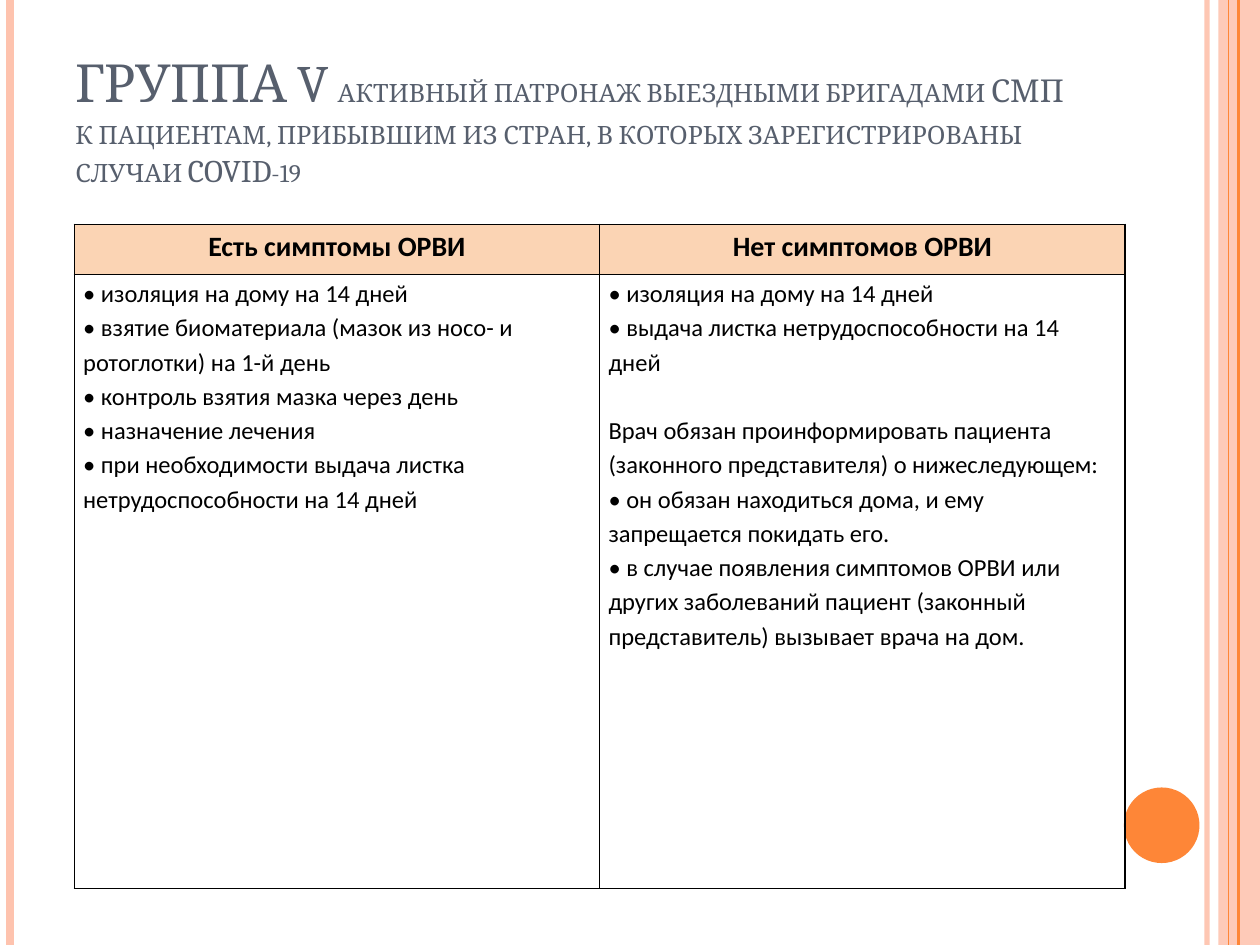
from pptx import Presentation
from pptx.dml.color import RGBColor as RGB
from pptx.enum.shapes import MSO_CONNECTOR as LINE, MSO_SHAPE as SHAPE
from pptx.enum.text import MSO_ANCHOR as ANCHOR, PP_ALIGN as ALIGN
from pptx.oxml.ns import qn
from pptx.util import Inches, Pt
from lxml.etree import SubElement as Sub


def paint(fill, tint, alpha=100):
    fill.solid()
    fill.fore_color.rgb = RGB.from_string(tint)
    if alpha < 100:
        node = fill._xPr.find(qn("a:solidFill"))[0]
        Sub(node, qn("a:alpha")).set("val", str(alpha * 1000))


def write(par, text, face, size, tint, bold=False):
    run = par.add_run()
    run.text = text
    run.font.name = face
    run.font.size = Pt(size)
    run.font.bold = bold
    run.font.color.rgb = RGB.from_string(tint)
    return run


deck = Presentation()
deck.slide_width, deck.slide_height = Inches(10), Inches(7.5)
slide = deck.slides.add_slide(deck.slide_layouts[6])
shapes = slide.shapes
paint(slide.background.fill, "FFFFFF")

stripes = [
    (9.58, "FEC3AE", 3, 93),
    (0.08, "FEC3AE", 4.5, 100),
    (9.83, "FE8637", 1.5, 100),
    (9.75, "FE8637", 0.75, 100),
]
blocks = [
    (SHAPE.RECTANGLE, 9.67, 0, 0.33, 7.5, "FEC3AE", 87),
    (SHAPE.OVAL, 8.92, 6.25, 0.6, 0.6, "FE8637", 100),
]
for kind, left, top, wide, high, tint, alpha in blocks:
    block = shapes.add_shape(kind, Inches(left), Inches(top), Inches(wide), Inches(high))
    block.shadow.inherit = False
    block.line.fill.background()
    paint(block.fill, tint, alpha)
for left, tint, width, alpha in stripes:
    stripe = shapes.add_connector(LINE.STRAIGHT, Inches(left), 0, Inches(left), Inches(7.5))
    stripe.line.width = Pt(width)
    paint(stripe.line.fill, tint, alpha)
    Sub(stripe._element.spPr, qn("a:effectLst"))

title = shapes.add_textbox(Inches(0.5), Inches(0.3), Inches(8.17), Inches(1.25)).text_frame
title.word_wrap = True
title.vertical_anchor = ANCHOR.BOTTOM
heads = [
    ("ГРУППА V ", 30),
    ("активный патронаж выездными бригадами СМП к пациентам, прибывшим из стран, "
     "в которых зарегистрированы случаи COVID-19", 18),
]
for text, size in heads:
    run = write(title.paragraphs[0], text, "Cambria", size, "575F6D")
    run.font._element.set("cap", "small")

rows = [
    [["Есть симптомы ОРВИ"], ["Нет симптомов ОРВИ"]],
    [
        [
            "• изоляция на дому на 14 дней",
            "• взятие биоматериала (мазок из носо- и ротоглотки) на 1-й день",
            "• контроль взятия мазка через день",
            "• назначение лечения",
            "• при необходимости выдача листка нетрудоспособности на 14 дней",
        ],
        [
            "• изоляция на дому на 14 дней",
            "• выдача листка нетрудоспособности на 14 дней",
            "Врач обязан проинформировать пациента (законного представителя) о нижеследующем:\n"
            "• он обязан находиться дома, и ему запрещается покидать его.",
            "• в случае появления симптомов ОРВИ или других заболеваний пациент "
            "(законный представитель) вызывает врача на дом.",
        ],
    ],
]
table = shapes.add_table(2, 2, Inches(0.59), Inches(1.78), Inches(8.34), Inches(5.27)).table
for col in table.columns:
    col.width = Inches(4.17)
for row, high in zip(table.rows, (0.4, 4.87)):
    row.height = Inches(high)

for r, row in enumerate(rows):
    for c, lines in enumerate(row):
        cell = table.cell(r, c)
        cell.margin_left = cell.margin_right = Inches(0.07)
        cell.margin_top = cell.margin_bottom = 0
        props = cell._tc.get_or_add_tcPr()
        for side in ("lnL", "lnR", "lnT", "lnB"):
            edge = Sub(props, qn("a:" + side), w=str(Pt(1)))
            Sub(Sub(edge, qn("a:solidFill")), qn("a:srgbClr"), val="000000")
        if r == 0:
            paint(cell.fill, "FBD4B4")
        else:
            cell.fill.background()
        frame = cell.text_frame
        for i, line in enumerate(lines):
            par = frame.add_paragraph() if i else frame.paragraphs[0]
            par.line_spacing = 1.15
            par.alignment = ALIGN.LEFT if r else ALIGN.CENTER
            if line.startswith("Врач"):
                par.space_before = Pt(19.6)
            for j, part in enumerate(line.split("\n")):
                if j:
                    par.add_line_break()
                write(par, part, "Calibri", 14 if r else 16, "000000", r == 0)

deck.save("out.pptx")
